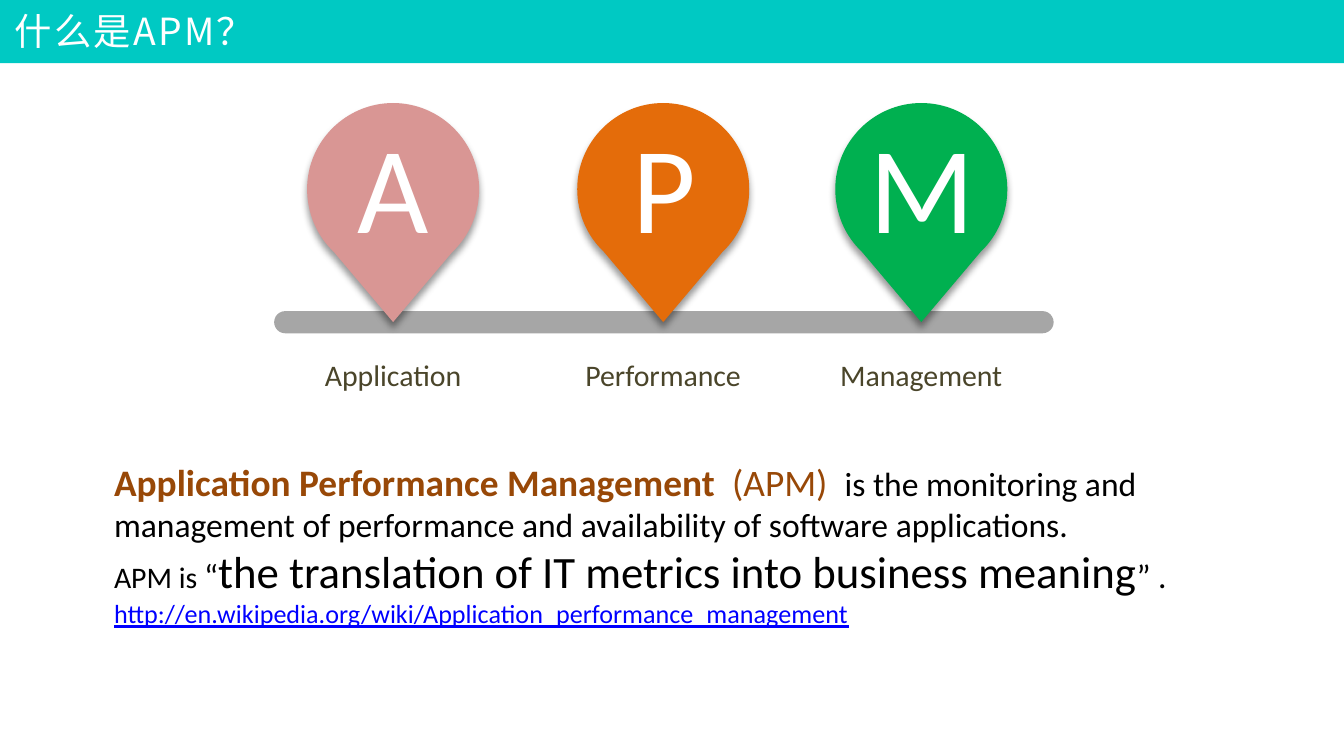
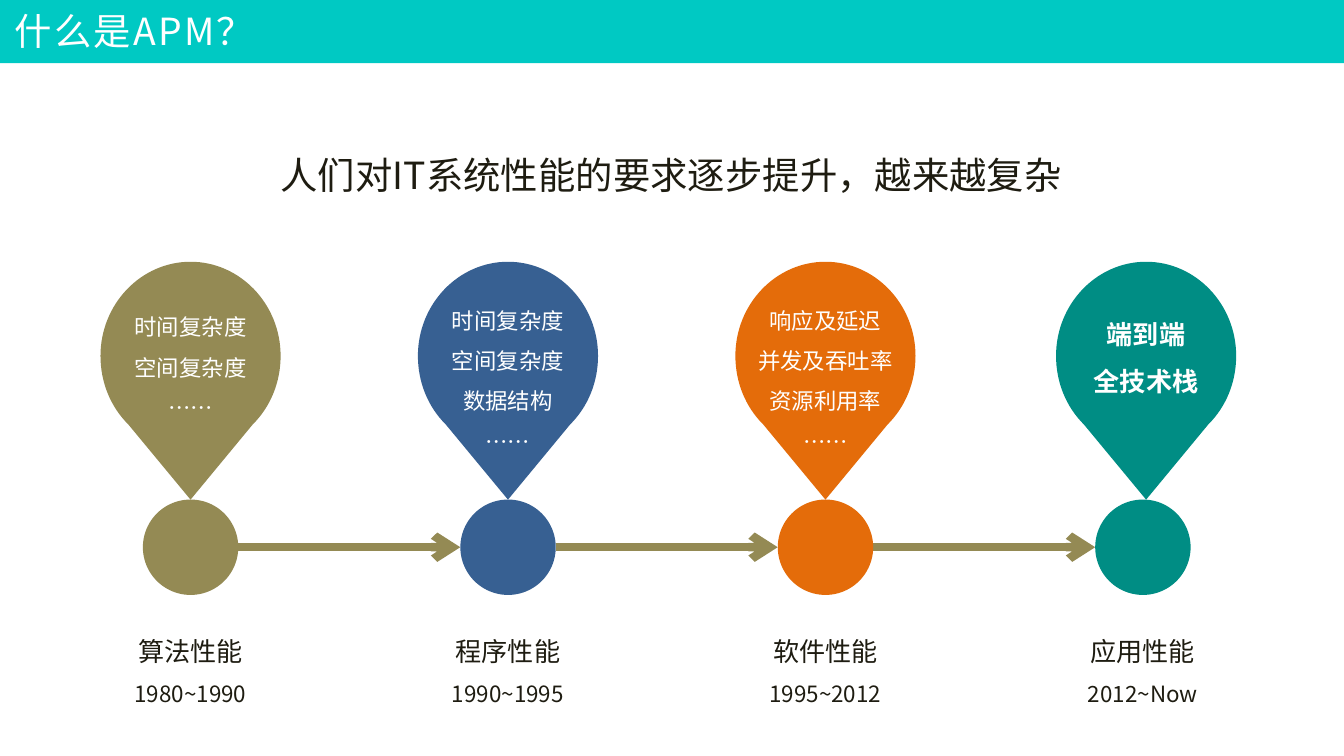
from lxml import etree
from pptx import Presentation
from pptx.dml.color import RGBColor
from pptx.enum.shapes import MSO_CONNECTOR, MSO_SHAPE
from pptx.enum.text import MSO_ANCHOR, PP_ALIGN
from pptx.oxml.ns import qn
from pptx.util import Inches, Pt

RECT, ROUND, OVAL = MSO_SHAPE.RECTANGLE, MSO_SHAPE.ROUNDED_RECTANGLE, MSO_SHAPE.OVAL
LINE = MSO_CONNECTOR.STRAIGHT
TOP, MID = MSO_ANCHOR.TOP, MSO_ANCHOR.MIDDLE
LEFT, MIDX = PP_ALIGN.LEFT, PP_ALIGN.CENTER

AQUA = RGBColor(0x00, 0xC9, 0xC3)
WHITE = RGBColor(0xFF, 0xFF, 0xFF)
BLACK = RGBColor(0x00, 0x00, 0x00)
INK = RGBColor(0x1E, 0x1C, 0x11)
OLIVE = RGBColor(0x4A, 0x45, 0x2A)
GREY = RGBColor(0xA6, 0xA6, 0xA6)
PINK = RGBColor(0xD9, 0x96, 0x94)
ORANGE = RGBColor(0xE4, 0x6C, 0x0A)
GREEN = RGBColor(0x00, 0xB0, 0x50)
BROWN = RGBColor(0x98, 0x48, 0x07)
BLUE = RGBColor(0x00, 0x00, 0xFF)
KHAKI = RGBColor(0x94, 0x8A, 0x54)
NAVY = RGBColor(0x37, 0x60, 0x92)
TEAL = RGBColor(0x00, 0x8D, 0x84)

LATIN, HAN = "Calibri", "Noto Sans CJK SC"

# Square grid: 100 columns by 56.25 rows
COLS = 100
deck = Presentation()
deck.slide_width, deck.slide_height = Inches(10), Inches(5.625)
CELL = deck.slide_width / COLS


def write(slide, at, paras=(), kind=None, shape=None, fill=None, size=12, color=INK,
          font=HAN, bold=False, under=False, track=0, align=MIDX, anchor=MID,
          space=None, foot=0.5):
    """Put paragraphs in a text box, a preset shape or a given shape."""
    if shape is None:
        spot = [round(n * CELL) for n in at]
        shape = slide.shapes.add_shape(kind, *spot) if kind else slide.shapes.add_textbox(*spot)
    if shape.shape_type != 17:
        shape.shadow.inherit = False
        shape.line.fill.background()
        shape.fill.background()
    if fill is not None:
        shape.fill.solid()
        shape.fill.fore_color.rgb = fill
    frame = shape.text_frame
    frame.word_wrap, frame.vertical_anchor = True, anchor
    frame.margin_bottom = round(foot * CELL)
    base = dict(size=size, color=color, font=font, bold=bold, under=under)
    for i, para in enumerate(paras):
        p = frame.add_paragraph() if i else frame.paragraphs[0]
        p.alignment = align
        if space:
            p.line_spacing = space
        for words, extra in [(para, {})] if isinstance(para, str) else para:
            look = {**base, **extra}
            run = p.add_run()
            run.text = words
            face = run.font
            face.size, face.name = Pt(look["size"]), look["font"]
            face.bold, face.underline = look["bold"], look["under"]
            face.color.rgb = look["color"]
            props = run._r.get_or_add_rPr()
            etree.SubElement(props, qn("a:ea"), typeface=look["font"])
            if track:
                props.set("spc", str(round(track * 100)))
    return shape


def pin(slide, mid, top, wide, high, rise):
    """Outline a map pin: a round head of half-height rise over a pointed tip."""
    tip = high / rise - 1
    # Each step: end point, after two control points where the step is a curve
    steps = [[(0.55, -1), (1, -0.55), (1, 0)], [(1, 0.28), (0.89, 0.54), (0.69, 0.73)],
             [(0, tip)], [(-0.69, 0.73)],
             [(-0.89, 0.54), (-1, 0.28), (-1, 0)], [(-1, -0.55), (-0.55, -1), (0, -1)]]
    spots = [[(round((mid + x * wide / 2) * CELL), round((top + rise + y * rise) * CELL))
              for x, y in step] for step in steps]
    path = slide.shapes.build_freeform(*spots[-1][-1], 1)
    path.add_line_segments([step[-1] for step in spots], close=True)
    shape = path.convert_to_shape()
    # Bend the straight steps that have control points
    for node, step in zip(list(shape._element.spPr.iter(qn("a:lnTo"))), spots):
        if len(step) == 3:
            node.tag = qn("a:cubicBezTo")
            for i, (x, y) in enumerate(step[:2]):
                dot = etree.Element(qn("a:pt"), x=str(x - shape.left), y=str(y - shape.top))
                node.insert(i, dot)
    return shape


# Shared band and title
pages = []
for _ in range(2):
    page = deck.slides.add_slide(deck.slide_layouts[6])
    write(page, (0, 0, COLS, 4.7), kind=RECT, fill=AQUA)
    write(page, (0.1, 0.2, 70.1, 4.1), ["什么是APM？"], size=20, color=WHITE,
          track=1.2, align=LEFT)
    pages.append(page)
what, steps = pages

# Slide 1: three pins on a bar
names = [(29.25, "Application", PINK), (49.35, "Performance", ORANGE),
         (68.55, "Management", GREEN)]
for mid, name, tint in names:
    label = write(what, (mid - 9.05, 25.9, 18.1, 4), [name], kind=ROUND, size=16,
                  color=OLIVE, font=LATIN)
    label.adjustments[0] = 0.055
bar = write(what, (20.4, 23.15, 58, 1.65), kind=ROUND, fill=GREY)
bar.adjustments[0] = 0.5
for mid, name, tint in names:
    drop = pin(what, mid, 7.67, 12.8, 16.3, 6.4)
    write(what, None, shape=drop, fill=tint)
    fx = drop._element.spPr.find(qn("a:effectLst"))
    cast = etree.SubElement(fx, qn("a:outerShdw"), blurRad=str(Pt(4)), dist=str(Pt(3)),
                            dir="5400000", algn="t", rotWithShape="0")
    dark = etree.SubElement(cast, qn("a:srgbClr"), val="000000")
    etree.SubElement(dark, qn("a:alpha"), val="40000")
for (mid, name, tint), wide in zip(names, (7.4, 6.8, 9.9)):
    letter = write(what, (mid - wide / 2 + 0.1, 7.7, wide, 12.1), [name[0]], size=66,
                   color=WHITE, font=LATIN, align=LEFT, anchor=TOP)
    letter.text_frame.word_wrap = False

# Slide 1: definition
write(what, (7.5, 33.65, 83.5, 13.8), [
    [("Application Performance Management", dict(size=20, color=BROWN, bold=True)),
     ("  (APM)  ", dict(size=20, color=BROWN)),
     ("is the monitoring and management of performance and availability of "
      "software applications.", {})],
    [("APM is ", dict(size=16)), ("“", {}),
     ("the translation of IT metrics into business meaning", dict(size=24)), ("” .", {})],
    [("http://en.wikipedia.org/wiki/Application_performance_management",
      dict(size=14, color=BLUE, under=True))],
], size=18, color=BLACK, font=LATIN, align=LEFT, anchor=TOP)

# Slide 2: stages, each with tint, name, years, pin lines, pin shift, text foot
stages = [
    (KHAKI, "算法性能", "1980~1990", ["时间复杂度", "空间复杂度", "……"], 0, 3.5),
    (NAVY, "程序性能", "1990~1995", ["时间复杂度", "空间复杂度", "数据结构", "……"], 0, 1.5),
    (ORANGE, "软件性能", "1995~2012", ["响应及延迟", "并发及吞吐率资源利用率", "……"], 0, 1.5),
    (TEAL, "应用性能", "2012~Now", ["端到端", "全技术栈"], 0.24, 5.1),
]
FIRST, STEP, DOT, AXIS = 14.18, 23.62, 7.1, 40.72
mids = [FIRST + i * STEP for i in range(len(stages))]

# Slide 2: time line of dots and arrows
for mid, (tint, *_) in zip(mids, stages):
    if mid != mids[-1]:
        ends = mid + DOT / 2, AXIS, mid + STEP - DOT / 2, AXIS
        link = steps.shapes.add_connector(LINE, *[round(n * CELL) for n in ends])
        link.line.color.rgb, link.line.width = KHAKI, Pt(4.5)
        etree.SubElement(link.line._get_or_add_ln(), qn("a:tailEnd"), type="arrow")
        etree.SubElement(link._element.spPr, qn("a:effectLst"))
    write(steps, (mid - DOT / 2, AXIS - DOT / 2, DOT, DOT), kind=OVAL, fill=tint)

# Slide 2: stage labels
for mid, (_, name, years, *_) in zip(mids, stages):
    write(steps, (mid - 6.7, 46.2, 13.4, 6.3), [[(name, dict(size=14))], years],
          kind=ROUND, space=1.5)

# Slide 2: heading
write(steps, (19.65, 10.8, 60.6, 4.4), ["人们对IT系统性能的要求逐步提升，越来越复杂"],
      size=20, anchor=TOP)

# Slide 2: pins
for mid, (tint, _, _, lines, shift, foot) in zip(mids, stages):
    last = mid == mids[-1]
    write(steps, None, lines, shape=pin(steps, mid + shift, 19.48, 13.4, 17.7, 7),
          fill=tint, size=14 if last else 12, color=WHITE, bold=last, space=1.5, foot=foot)

deck.save("out.pptx")
